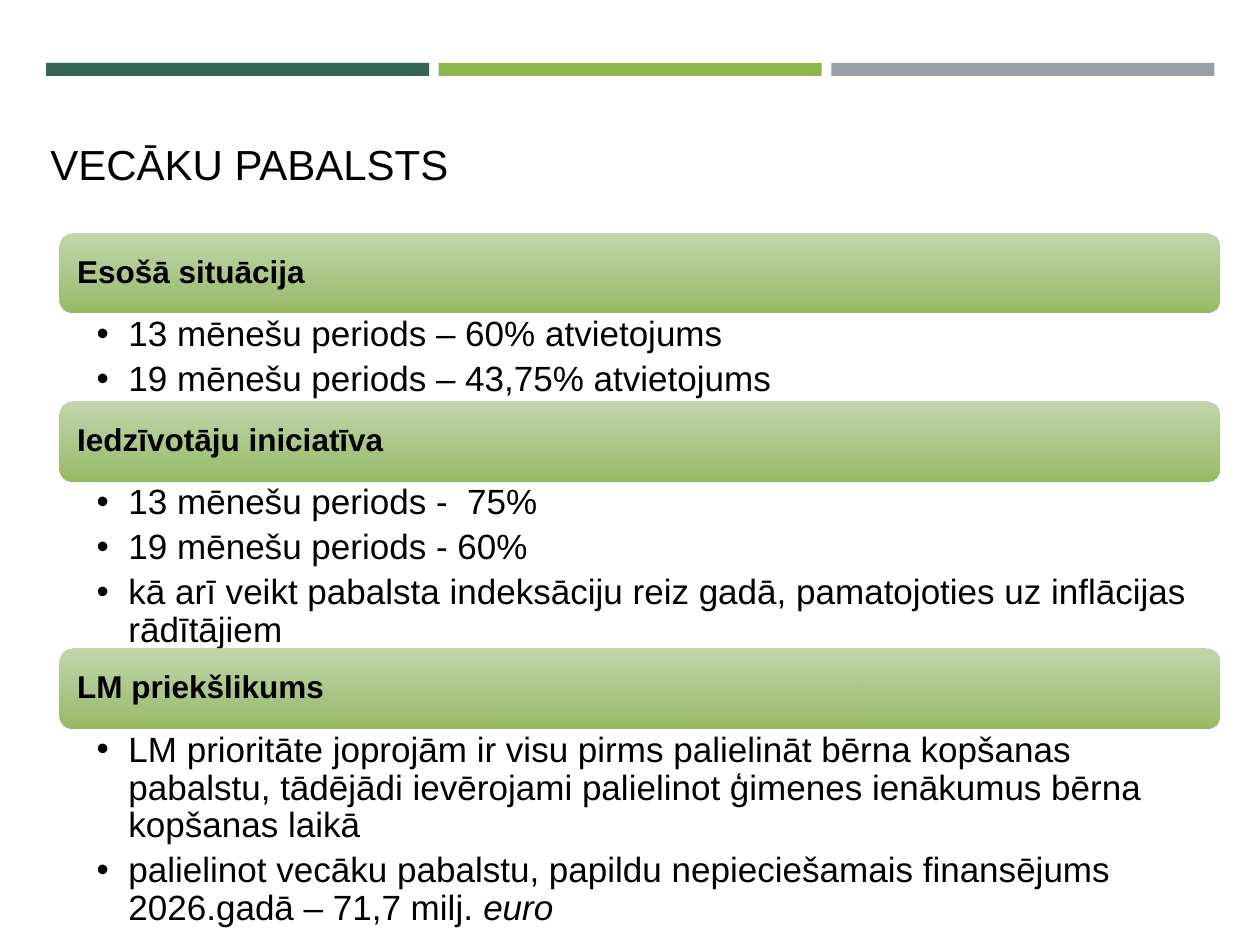
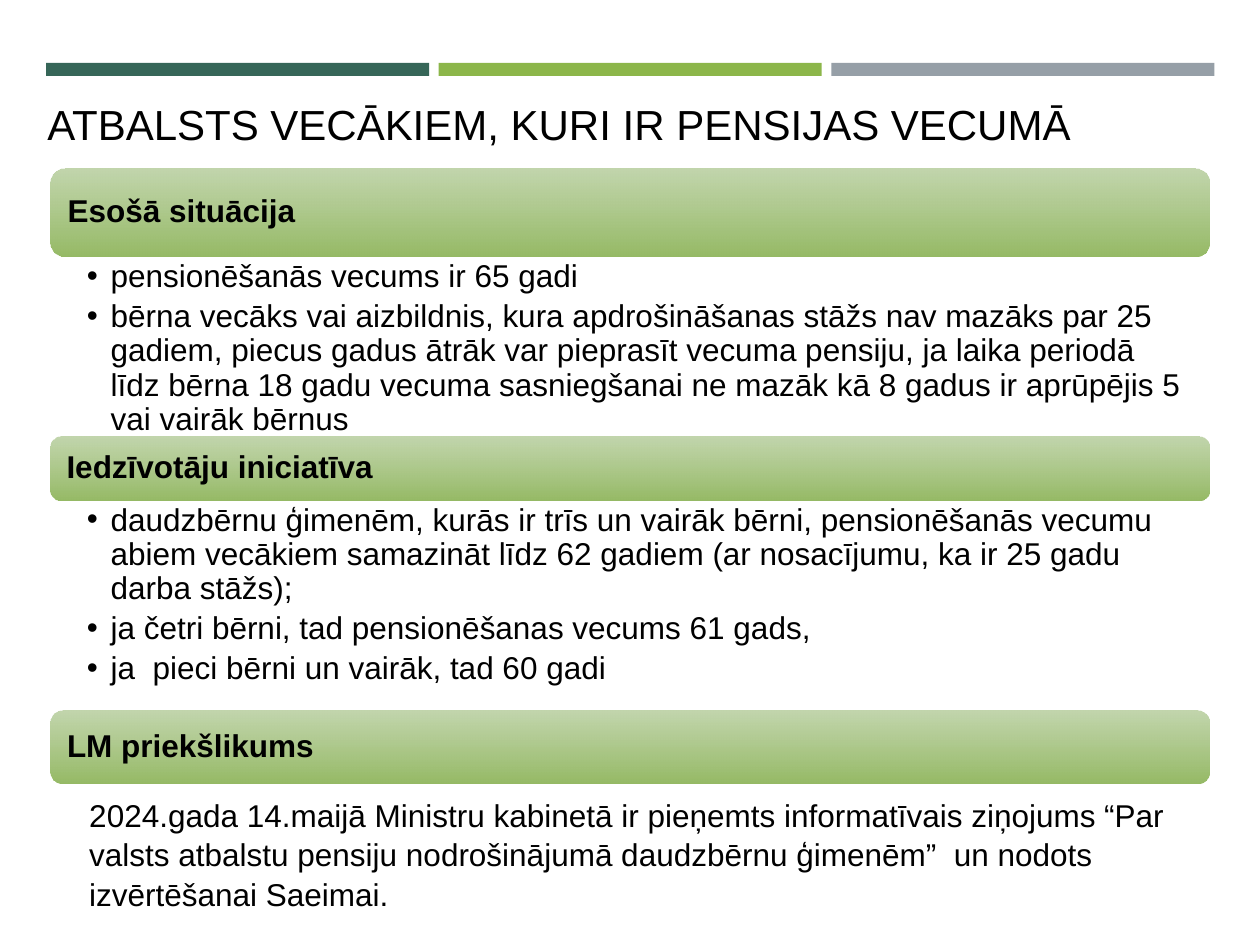
from collections import namedtuple

from lxml.etree import SubElement
from pptx import Presentation
from pptx.dml.color import RGBColor
from pptx.enum.shapes import MSO_SHAPE as Shape
from pptx.enum.text import MSO_ANCHOR as Anchor, MSO_AUTO_SIZE as AutoSize, PP_ALIGN as Align
from pptx.oxml.ns import qn
from pptx.util import Cm, Pt

BLACK = RGBColor(0x00, 0x00, 0x00)
DARK_GREEN = RGBColor(0x36, 0x66, 0x58)
GREEN = RGBColor(0x8C, 0xB6, 0x4A)
GREY = RGBColor(0x96, 0x9F, 0xA7)
BAND_TOP = RGBColor(0xBB, 0xD1, 0xA3)
BAND_BOTTOM = RGBColor(0x96, 0xBA, 0x66)
FONT = "Arial"
TITLE_ONLY = 5

Box = namedtuple("Box", "left top width height")
Section = namedtuple("Section", "heading band_height body_height bullets")


def place(shape, box):
    shape.left, shape.top, shape.width, shape.height = (Cm(length) for length in box)


def set_margins(frame, left, top, right, bottom):
    frame.margin_left, frame.margin_top = Cm(left), Cm(top)
    frame.margin_right, frame.margin_bottom = Cm(right), Cm(bottom)


def write(para, text, size=18, bold=False, italic=False, spacing=None, after=0):
    para.alignment = Align.LEFT
    para.space_before, para.space_after = Pt(0), Pt(after)
    if spacing:
        para.line_spacing = spacing
    span = para.add_run()
    span.text = text
    span.font.name, span.font.size = FONT, Pt(size)
    span.font.bold, span.font.italic = bold, italic
    span.font.color.rgb = BLACK


def add_bullet(para, indent):
    props = para._p.get_or_add_pPr()
    props.set("marL", str(Cm(indent)))
    props.set("indent", str(-Cm(indent)))
    SubElement(props, qn("a:buFont"), typeface=FONT)
    SubElement(props, qn("a:buChar"), char="•")


def add_plain_shape(page, kind, box):
    shape = page.shapes.add_shape(kind, *(Cm(length) for length in box))
    shape.shadow.inherit = False
    shape.line.fill.background()
    return shape


def add_text_box(page, box):
    shape = page.shapes.add_textbox(*(Cm(length) for length in box))
    shape.text_frame.word_wrap = True
    return shape.text_frame


def add_top_stripes(page, box, gap=0.19):
    colours = (DARK_GREEN, GREEN, GREY)
    width = (box.width - gap * (len(colours) - 1)) / len(colours)
    for index, colour in enumerate(colours):
        left = box.left + index * (width + gap)
        stripe = add_plain_shape(page, Shape.RECTANGLE, Box(left, box.top, width, box.height))
        stripe.fill.solid()
        stripe.fill.fore_color.rgb = colour


def add_title(page, box, text):
    title = page.shapes.title
    place(title, box)
    frame = title.text_frame
    frame.auto_size = AutoSize.NONE
    frame.vertical_anchor = Anchor.BOTTOM
    write(frame.paragraphs[0], text, size=24)


def add_band(page, box, heading):
    band = add_plain_shape(page, Shape.ROUNDED_RECTANGLE, box)
    band.fill.gradient()
    band.fill.gradient_angle = 270
    for stop, colour in zip(band.fill.gradient_stops, (BAND_TOP, BAND_BOTTOM)):
        stop.color.rgb = colour
    top_colour = next(band._element.spPr.iter(qn("a:srgbClr")))
    SubElement(top_colour, qn("a:alpha"), val="90000")
    frame = band.text_frame
    frame.word_wrap = True
    frame.vertical_anchor = Anchor.MIDDLE
    set_margins(frame, 0.27, 0.25, 0.25, 0.25)
    write(frame.paragraphs[0], heading, bold=True, spacing=0.9)


def add_bullets(page, box, bullets, size, indent, right_margin):
    frame = add_text_box(page, box)
    set_margins(frame, 0.74, 0.07, right_margin, 0.07)
    for index, (text, ending) in enumerate(bullets):
        para = frame.add_paragraph() if index else frame.paragraphs[0]
        write(para, text, size=size, spacing=0.9, after=size * 0.2)
        if ending:
            write(para, ending, size=size, italic=True, spacing=0.9, after=size * 0.2)
        add_bullet(para, indent)


def add_sections(page, box, sections, size, indent, right_margin):
    top = box.top
    for section in sections:
        add_band(page, Box(box.left, top, box.width, section.band_height), section.heading)
        top += section.band_height
        if section.bullets:
            body = Box(box.left, top, box.width, section.body_height)
            add_bullets(page, body, section.bullets, size, indent, right_margin)
        top += section.body_height


def add_page(deck, title, title_box):
    page = deck.slides.add_slide(deck.slide_layouts[TITLE_ONLY])
    add_top_stripes(page, Box(0.93, 1.27, 23.55, 0.26))
    add_title(page, title_box, title)
    return page


def build_parental_benefit(deck):
    page = add_page(deck, "VECĀKU PABALSTS", Box(0.76, 1.07, 23.37, 2.87))
    sections = (
        Section("Esošā situācija", 1.61, 1.78, (
            ("13 mēnešu periods – 60% atvietojums", ""),
            ("19 mēnešu periods – 43,75% atvietojums", ""),
        )),
        Section("Iedzīvotāju iniciatīva", 1.61, 3.38, (
            ("13 mēnešu periods -  75%", ""),
            ("19 mēnešu periods - 60%", ""),
            ("kā arī veikt pabalsta indeksāciju reiz gadā, pamatojoties uz inflācijas "
             "rādītājiem", ""),
        )),
        Section("LM priekšlikums", 1.61, 4.01, (
            ("LM prioritāte joprojām ir visu pirms palielināt bērna kopšanas pabalstu, "
             "tādējādi ievērojami palielinot ģimenes ienākumus bērna kopšanas laikā", ""),
            ("palielinot vecāku pabalstu, papildu nepieciešamais finansējums "
             "2026.gadā – 71,7 milj. ", "euro"),
        )),
    )
    add_sections(page, Box(1.21, 4.7, 23.37, 14), sections,
                 size=20, indent=0.64, right_margin=0.41)


def build_pension_support(deck):
    page = add_page(deck, "ATBALSTS VECĀKIEM, KURI IR PENSIJAS VECUMĀ",
                    Box(0.7, 0.74, 23.37, 2.39))
    sections = (
        Section("Esošā situācija", 1.78, 3.63, (
            ("pensionēšanās vecums ir 65 gadi", ""),
            ("bērna vecāks vai aizbildnis, kura apdrošināšanas stāžs nav mazāks par 25 "
             "gadiem, piecus gadus ātrāk var pieprasīt vecuma pensiju, ja laika periodā "
             "līdz bērna 18 gadu vecuma sasniegšanai ne mazāk kā 8 gadus ir aprūpējis 5 "
             "vai vairāk bērnus", ""),
        )),
        Section("Iedzīvotāju iniciatīva", 1.28, 4.23, (
            ("daudzbērnu ģimenēm, kurās ir trīs un vairāk bērni, pensionēšanās vecumu "
             "abiem vecākiem samazināt līdz 62 gadiem (ar nosacījumu, ka ir 25 gadu "
             "darba stāžs);", ""),
            ("ja četri bērni, tad pensionēšanas vecums 61 gads,", ""),
            ("ja  pieci bērni un vairāk, tad 60 gadi", ""),
        )),
        Section("LM priekšlikums", 1.48, 0, ()),
    )
    add_sections(page, Box(1.01, 3.4, 23.37, 12.4), sections,
                 size=18, indent=0.48, right_margin=0.36)
    report = add_text_box(page, Box(1.55, 15.88, 22.83, 2.9))
    write(report.paragraphs[0],
          "2024.gada 14.maijā Ministru kabinetā ir pieņemts informatīvais ziņojums “Par "
          "valsts atbalstu pensiju nodrošinājumā daudzbērnu ģimenēm”  un nodots "
          "izvērtēšanai Saeimai.", spacing=1.05)


def main():
    deck = Presentation()
    deck.slide_width, deck.slide_height = Cm(25.4), Cm(19.05)
    build_parental_benefit(deck)
    build_pension_support(deck)
    deck.save("out.pptx")


if __name__ == "__main__":
    main()
